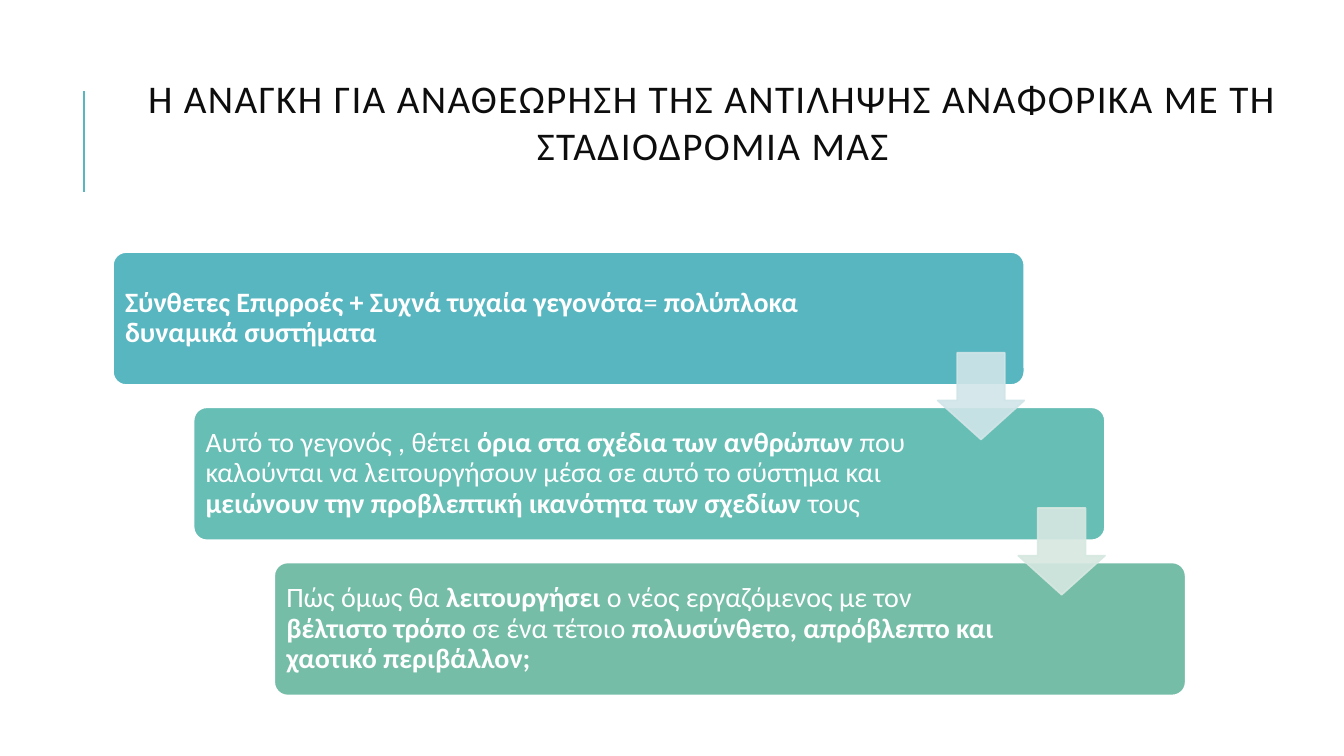
from lxml.etree import SubElement
from pptx import Presentation
from pptx.dml.color import RGBColor
from pptx.enum.shapes import MSO_CONNECTOR, MSO_SHAPE
from pptx.enum.text import MSO_ANCHOR, PP_ALIGN
from pptx.oxml.ns import qn
from pptx.util import Inches, Pt

WHITE = RGBColor(0xFF, 0xFF, 0xFF)
INK = RGBColor(0x0D, 0x0D, 0x0D)
BLUE = RGBColor(0x58, 0xB6, 0xC0)
TEAL = RGBColor(0x67, 0xBE, 0xB5)
GREEN = RGBColor(0x75, 0xBD, 0xA7)
PALE_BLUE = RGBColor(0xD1, 0xE5, 0xE8)
PALE_GREEN = RGBColor(0xD6, 0xE8, 0xE1)

FONT = "Calibri"
TITLE = "Η ΑΝΑΓΚΗ ΓΙΑ ΑΝΑΘΕΩΡΗΣΗ ΤΗΣ ΑΝΤΙΛΗΨΗΣ ΑΝΑΦΟΡΙΚΑ ΜΕ ΤΗ ΣΤΑΔΙΟΔΡΟΜΙΑ ΜΑΣ"
STEPS = [
    (BLUE, 7.61, [
        ("Σύνθετες Επιρροές + Συχνά τυχαία γεγονότα", True),
        ("= ", False),
        ("πολύπλοκα δυναμικά συστήματα", True),
    ]),
    (TEAL, 7.3, [
        ("Αυτό το γεγονός , θέτει ", False),
        ("όρια στα σχέδια των ανθρώπων ", True),
        ("που καλούνται να λειτουργήσουν μέσα σε αυτό το σύστημα και ", False),
        ("μειώνουν την προβλεπτική ικανότητα των σχεδίων", True),
        (" τους", False),
    ]),
    (GREEN, 7.3, [
        ("Πώς όμως θα ", False),
        ("λειτουργήσει", True),
        (" ο νέος εργαζόμενος με τον ", False),
        ("βέλτιστο τρόπο ", True),
        ("σε ένα τέτοιο ", False),
        ("πολυσύνθετο, απρόβλεπτο και χαοτικό περιβάλλον;", True),
    ]),
]
ARROW_COLORS = [PALE_BLUE, PALE_GREEN]

STEP_LEFT, STEP_TOP = 1.12, 2.5
STEP_WIDTH, STEP_HEIGHT = 9.04, 1.32
SHIFT_X, SHIFT_Y = 0.8, 1.54
ARROW_LEFT, ARROW_TOP, ARROW_SIZE = 9.3, 3.5, 0.86
TEXT_MARGIN = 0.04


def add_accent_line(slide):
    """Draw the vertical rule beside the title."""
    rule = slide.shapes.add_connector(
        MSO_CONNECTOR.STRAIGHT, Inches(0.83), Inches(1.9), Inches(0.83), Inches(0.9))
    rule.line.color.rgb = BLUE
    rule.line.width = Pt(1.5)
    SubElement(rule._element.spPr, qn("a:effectLst"))


def add_text(slide, left, top, width, height, runs, size, color):
    """Add a wrapped, vertically centred box and return it with its runs."""
    box = slide.shapes.add_textbox(Inches(left), Inches(top), Inches(width), Inches(height))
    frame = box.text_frame
    frame.word_wrap = True
    frame.vertical_anchor = MSO_ANCHOR.MIDDLE
    for text, bold in runs:
        run = frame.paragraphs[0].add_run()
        run.text = text
        run.font.name = FONT
        run.font.size = Pt(size)
        run.font.bold = bold
        run.font.color.rgb = color
    return frame


def add_title(slide):
    """Add the centred, letter-spaced title."""
    frame = add_text(slide, 1.12, 0.64, 11.9, 1.12, [(TITLE, False)], 28, INK)
    heading = frame.paragraphs[0]
    heading.alignment = PP_ALIGN.CENTER
    heading.runs[0].font._element.set("spc", "100")


def add_block(slide, preset, left, top, width, height, adjustments, fill, outline):
    """Add a filled preset shape with a thin outline."""
    block = slide.shapes.add_shape(
        preset, Inches(left), Inches(top), Inches(width), Inches(height))
    for index, value in enumerate(adjustments):
        block.adjustments[index] = value
    block.shadow.inherit = False
    block.fill.solid()
    block.fill.fore_color.rgb = fill
    block.line.color.rgb = outline
    block.line.width = Pt(1.25)
    return block


def add_step(slide, index, color, text_width, runs):
    """Add one stair step with its text."""
    left, top = STEP_LEFT + index * SHIFT_X, STEP_TOP + index * SHIFT_Y
    add_block(slide, MSO_SHAPE.ROUNDED_RECTANGLE, left, top, STEP_WIDTH, STEP_HEIGHT,
              [0.1], color, WHITE)
    frame = add_text(slide, left + TEXT_MARGIN, top + TEXT_MARGIN, text_width,
                     STEP_HEIGHT - 2 * TEXT_MARGIN, runs, 20, WHITE)
    frame.margin_left = frame.margin_right = Inches(0.08)
    frame.margin_top = frame.margin_bottom = Inches(0.08)
    frame.paragraphs[0].line_spacing = 0.9


def add_step_arrow(slide, index, color):
    """Add a translucent arrow leading to the next step."""
    arrow = add_block(slide, MSO_SHAPE.DOWN_ARROW, ARROW_LEFT + index * SHIFT_X,
                      ARROW_TOP + index * SHIFT_Y, ARROW_SIZE, ARROW_SIZE,
                      [0.55, 0.45], color, color)
    for tint in arrow._element.spPr.iter(qn("a:srgbClr")):
        SubElement(tint, qn("a:alpha"), val="90000")


def main():
    """Build and save the slide."""
    deck = Presentation()
    deck.slide_width, deck.slide_height = Inches(13.33), Inches(7.5)
    slide = deck.slides.add_slide(deck.slide_layouts[6])
    add_accent_line(slide)
    add_title(slide)
    for index, (color, text_width, runs) in enumerate(STEPS):
        add_step(slide, index, color, text_width, runs)
    for index, color in enumerate(ARROW_COLORS):
        add_step_arrow(slide, index, color)
    deck.save("out.pptx")


if __name__ == "__main__":
    main()
